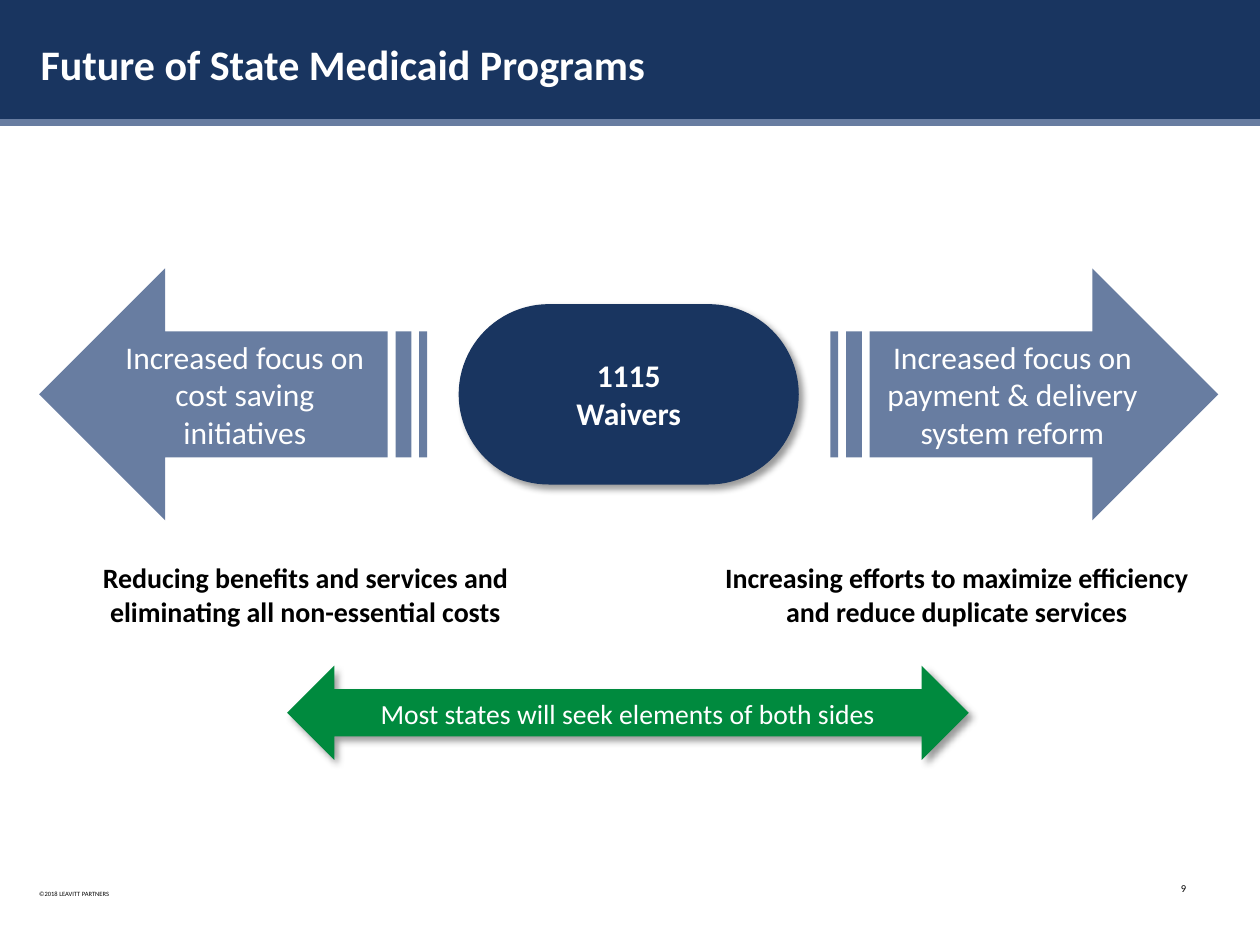
from dataclasses import dataclass

import pptx
import pptx.dml.color
import pptx.enum.shapes
import pptx.enum.text
import pptx.oxml
import pptx.oxml.ns
import pptx.util
from pptx.util import Cm

SHAPE = pptx.enum.shapes.MSO_SHAPE
ALIGN = pptx.enum.text.PP_ALIGN
ANCHOR = pptx.enum.text.MSO_ANCHOR


@dataclass(frozen=True)
class Theme:
    font: str = "Calibri"
    navy: str = "193560"
    slate: str = "687DA1"
    green: str = "008A3E"
    white: str = "FFFFFF"
    black: str = "000000"
    title_size: float = 24
    arrow_size: float = 18
    label_size: float = 16
    both_sides_size: float = 15.8
    number_size: float = 6
    copyright_size: float = 3.7


THEME = Theme()


def rgb(value):
    return pptx.dml.color.RGBColor.from_string(value)


def add_effects(shape, shadow=False):
    """Give the shape an empty effect list, or one with a soft shadow."""
    effects = pptx.oxml.parse_xml(
        f"<a:effectLst {pptx.oxml.ns.nsdecls('a')}>"
        + ('<a:outerShdw blurRad="50800" dist="38100" dir="2700000" algn="tl">'
           '<a:srgbClr val="000000"><a:alpha val="40000"/></a:srgbClr>'
           "</a:outerShdw>" if shadow else "")
        + "</a:effectLst>")
    shape._element.spPr.append(effects)


def write(shape, lines, size, color, bold=False, align=ALIGN.CENTER,
          insets=(0.25, 0.13), anchor=ANCHOR.TOP, wrap=True, spacing=None):
    """Fill a shape with paragraphs; insets are horizontal and vertical in cm."""
    frame = shape.text_frame
    frame.text = "\n".join(lines)
    horizontal, vertical = (Cm(inset) for inset in insets)
    frame_format = {
        "word_wrap": wrap, "vertical_anchor": anchor,
        "margin_left": horizontal, "margin_right": horizontal,
        "margin_top": vertical, "margin_bottom": vertical,
    }
    for name, value in frame_format.items():
        setattr(frame, name, value)
    font_format = {"name": THEME.font, "size": pptx.util.Pt(size), "bold": bold}
    for paragraph in frame.paragraphs:
        paragraph.alignment = align
        paragraph.line_spacing = spacing
        for run in paragraph.runs:
            for name, value in font_format.items():
                setattr(run.font, name, value)
            run.font.color.rgb = rgb(color)


def add_block(slide, kind, box, fill, shadow=False):
    shape = slide.shapes.add_shape(kind, *map(Cm, box))
    shape.fill.solid()
    shape.fill.fore_color.rgb = rgb(fill)
    shape.line.fill.background()
    if shadow:
        add_effects(shape, shadow=True)
    else:
        shape.shadow.inherit = False
    return shape


def add_text(slide, box, text, size, color, **options):
    write(slide.shapes.add_textbox(*map(Cm, box)), [text], size, color, **options)


def add_header(slide, box, title):
    left, top, width, height = box
    add_block(slide, SHAPE.RECTANGLE, box, THEME.navy)
    rule_y = Cm(top + height - 0.08)
    rule = slide.shapes.add_connector(
        pptx.enum.shapes.MSO_CONNECTOR.STRAIGHT,
        Cm(left), rule_y, Cm(left + width), rule_y)
    rule.line.color.rgb = rgb(THEME.slate)
    rule.line.width = pptx.util.Pt(4)
    add_effects(rule)
    add_text(slide, (left + 0.64, top + 0.79, width - 1.35, 1.27), title,
             THEME.title_size, THEME.white, bold=True, align=ALIGN.LEFT,
             insets=(0.18, 0.1), spacing=0.9)


def add_waiver_diagram(slide, box):
    left, top, width, height = box
    arrow_width = 7.82

    # Central pill
    pill_width, pill_height = 6.83, 3.61
    pill = add_block(
        slide, SHAPE.ROUNDED_RECTANGLE,
        (left + (width - pill_width) / 2, top + (height - pill_height) / 2,
         pill_width, pill_height), THEME.navy, shadow=True)
    pill.adjustments[0] = 0.5
    pill.line.color.rgb = rgb(THEME.navy)
    pill.line.width = pptx.util.Pt(0.75)
    write(pill, ["1115", "Waivers"], THEME.arrow_size, THEME.white, bold=True,
          insets=(0.51, 0.51))

    # Striped arrows pointing outwards
    arrows = [
        (left, "Increased focus on cost saving initiatives", True),
        (left + width - arrow_width,
         "Increased focus on payment & delivery system reform", False),
    ]
    for arrow_left, text, flipped in arrows:
        arrow = add_block(slide, SHAPE.STRIPED_RIGHT_ARROW,
                          (arrow_left, top, arrow_width, height), THEME.slate)
        if flipped:
            arrow._element.spPr.find(pptx.oxml.ns.qn("a:xfrm")).set("flipH", "1")
        write(arrow, [text], THEME.arrow_size, THEME.white, anchor=ANCHOR.MIDDLE)


def add_outcomes(slide, box):
    left, top, width, height = box

    # Labels under the two arrows
    labels = [
        (0, 10.74, "Reducing benefits and services and "
                   "eliminating all non-essential costs"),
        (13.23, 10.54, "Increasing efforts to maximize efficiency "
                       "and reduce duplicate services"),
    ]
    for offset, label_width, text in labels:
        add_text(slide, (left + offset, top, label_width, 1.63), text,
                 THEME.label_size, THEME.black, bold=True)

    # Double arrow joining both sides
    arrow_height = 1.9
    arrow = add_block(
        slide, SHAPE.LEFT_RIGHT_ARROW,
        (left + 5, top + height - arrow_height, 13.74, arrow_height),
        THEME.green, shadow=True)
    write(arrow, ["Most states will seek elements of both sides"],
          THEME.both_sides_size, THEME.white, insets=(0.28, 0.15))


def add_footer(slide, box):
    left, top, width, height = box
    insets = (0.15, 0.08)
    add_text(slide, (left, top + 0.16, 1.78, 0.3), "©2018 LEAVITT PARTNERS",
             THEME.copyright_size, THEME.black, align=ALIGN.LEFT,
             insets=insets, wrap=False)
    add_text(slide, (left + width - 0.79, top, 0.79, height), "9",
             THEME.number_size, THEME.black, align=ALIGN.RIGHT, insets=insets)


def main():
    presentation = pptx.Presentation()
    presentation.slide_width = Cm(25.4)
    presentation.slide_height = Cm(19.05)
    slide = presentation.slides.add_slide(presentation.slide_layouts[6])
    add_header(slide, (0, 0, 25.4, 2.54), "Future of State Medicaid Programs")
    add_waiver_diagram(slide, (0.79, 5.41, 23.77, 5.08))
    add_outcomes(slide, (0.79, 11.18, 23.77, 4.14))
    add_footer(slide, (0.64, 17.7, 23.42, 0.41))
    presentation.save("out.pptx")


if __name__ == "__main__":
    main()
